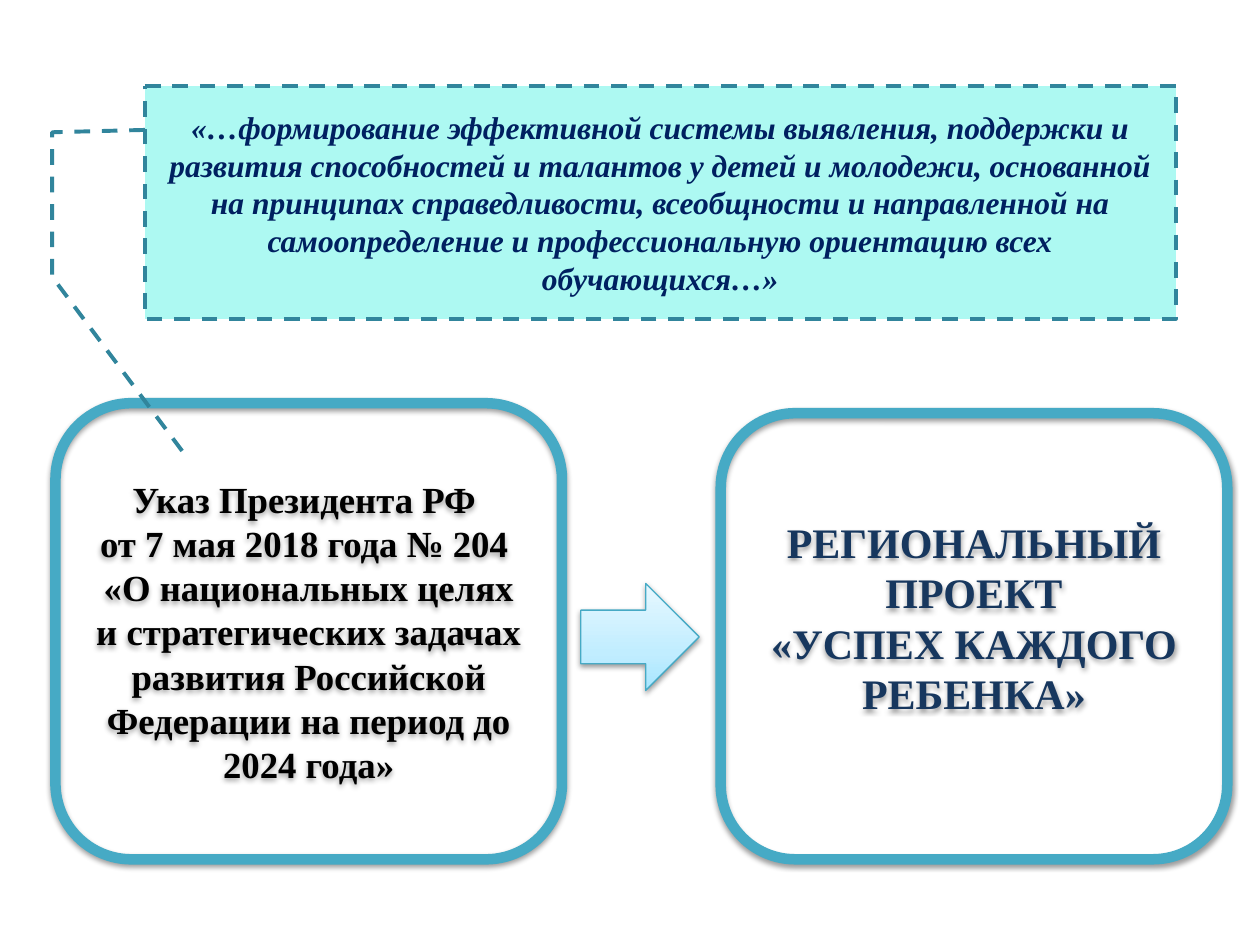
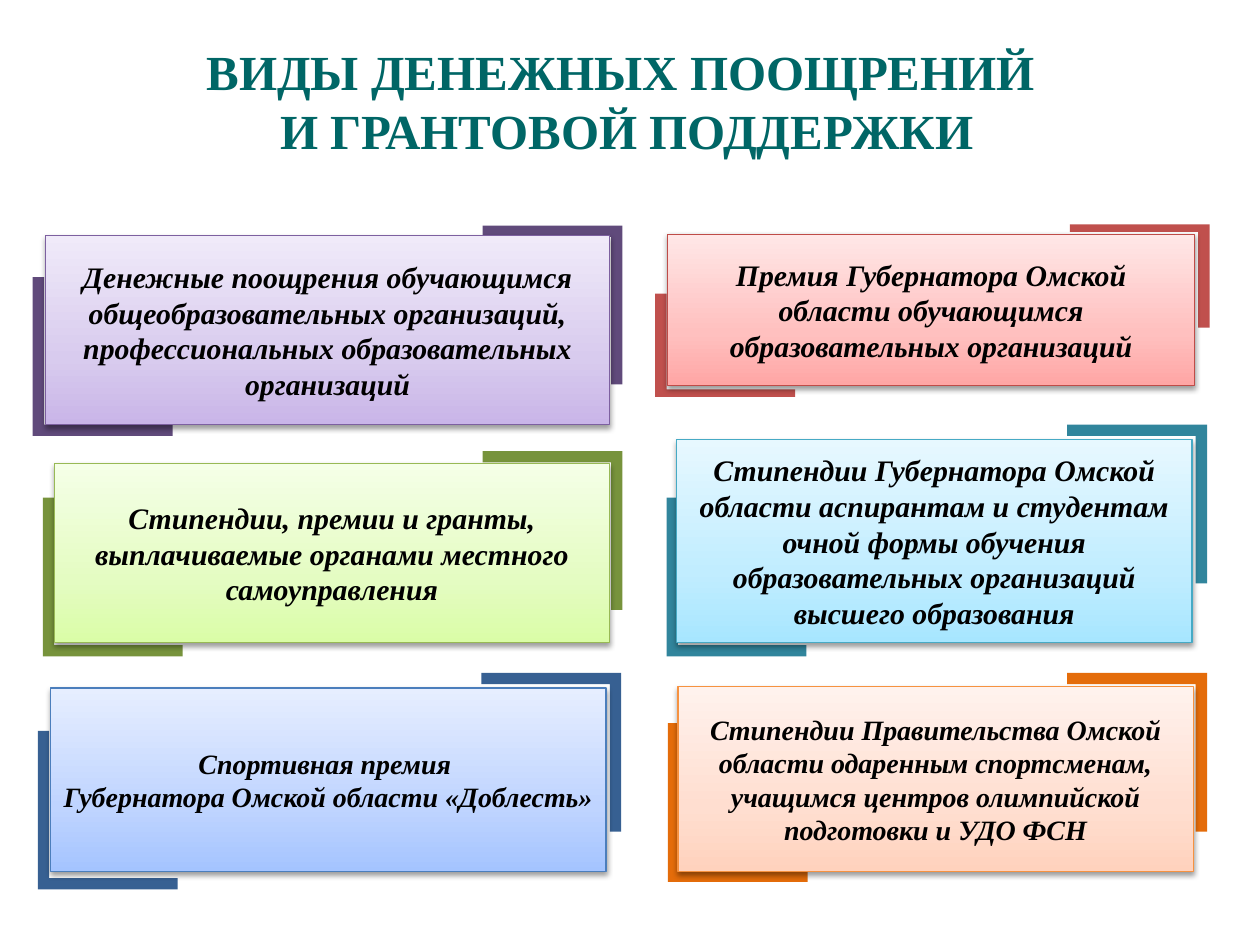
from copy import deepcopy
from dataclasses import dataclass

from lxml.etree import SubElement
from pptx import Presentation
from pptx.dml.color import RGBColor
from pptx.enum.dml import MSO_LINE
from pptx.enum.shapes import MSO_SHAPE as Preset
from pptx.enum.text import MSO_ANCHOR as Anchor, MSO_AUTO_SIZE as AutoSize, PP_ALIGN as Align
from pptx.oxml.ns import qn
from pptx.util import Pt

PX = 9144


@dataclass(frozen=True)
class Palette:
    """Colours of one card: bracket, outline and gradient from bottom to top."""
    bracket: str
    outline: str
    gradient: tuple


@dataclass(frozen=True)
class Theme:
    """Fonts, type sizes and colours shared by the slides."""
    font: str = "Times New Roman"
    title_size: int = 28
    project_size: int = 24
    decree_size: int = 21
    quote_size: int = 18
    card_size: int = 17
    small_card_size: int = 16
    black: str = "000000"
    title: str = "006666"
    project: str = "17375E"
    quote: str = "002060"
    quote_fill: str = "ADF9F2"
    purple: Palette = Palette("604A7B", "7D60A0", ("C9B5E8", "D8CBEE", "F0EAF9"))
    green: Palette = Palette("77933C", "98B955", ("DAFDA7", "E4FCC2", "F5FFE7"))
    blue: Palette = Palette("376092", "4B7EBC", ("A4C4FF", "BFD4FF", "E6EEFF"))
    red: Palette = Palette("C0504D", "BF4C48", ("FFA6A5", "FFC0BF", "FFE7E7"))
    aqua: Palette = Palette("31859C", "46AAC5", ("A7E6FF", "C1EDFF", "E7F8FF"))
    orange: Palette = Palette("E46C0A", "F69240", ("FFD2BD", "FFDED0", "FFF2ED"))


THEME = Theme()


def rgb(code):
    """Turn a hex code into a colour."""
    return RGBColor.from_string(code)


def write_text(shape, lines, *, size, color=THEME.black, italic=False, anchor=Anchor.MIDDLE,
               bottom_inset=5):
    """Fill a shape with centred bold paragraphs."""
    frame = shape.text_frame
    frame.word_wrap = True
    frame.auto_size = AutoSize.NONE
    frame.vertical_anchor = anchor
    frame.margin_bottom = bottom_inset * PX
    frame.text = "\n".join(lines)
    for paragraph in frame.paragraphs:
        paragraph.alignment = Align.CENTER
        for run in paragraph.runs:
            font = run.font
            font.name, font.size = THEME.font, Pt(size)
            font.bold, font.italic = True, italic
            font.color.rgb = rgb(color)


def add_preset(slide, preset, box, outline, weight):
    """Add a preset shape with an outline and no inherited shadow."""
    shape = slide.shapes.add_shape(preset, *(length * PX for length in box))
    shape.line.color.rgb = rgb(outline)
    shape.line.width = Pt(weight)
    shape.shadow.inherit = False
    return shape


def cast_shadow(shape):
    """Give a shape a soft shadow straight below it."""
    effects = shape.element.spPr.find(qn("a:effectLst"))
    shadow = SubElement(effects, qn("a:outerShdw"), blurRad="40000", dist="20000",
                        dir="5400000", rotWithShape="0")
    color = SubElement(shadow, qn("a:srgbClr"), val=THEME.black)
    SubElement(color, qn("a:alpha"), val="38000")


def fill_gradient(shape, colors):
    """Fill a shape with three colours running from bottom to top."""
    shape.fill.gradient()
    shape.fill.gradient_angle = 90
    stops = shape.element.spPr.find(".//" + qn("a:gsLst"))
    stops.append(deepcopy(stops[0]))
    for stop, color, position in zip(shape.fill.gradient_stops, colors, (0, 0.35, 1)):
        stop.color.rgb = rgb(color)
        stop.position = position


def add_glossy(slide, preset, box, palette):
    """Add a shadowed gradient shape."""
    shape = add_preset(slide, preset, box, palette.outline, 0.75)
    fill_gradient(shape, palette.gradient)
    cast_shadow(shape)
    return shape


def add_frame(slide, box, lines, **text_format):
    """Add an unfilled rounded frame with text."""
    frame = add_preset(slide, Preset.ROUNDED_RECTANGLE, box, THEME.aqua.outline, 6)
    frame.fill.background()
    cast_shadow(frame)
    write_text(frame, lines, **text_format)


def add_quote(slide, box, quote):
    """Add the dashed callout that quotes the decree."""
    callout = add_preset(slide, Preset.LINE_CALLOUT_3, box, THEME.aqua.bracket, 2.25)
    callout.line.dash_style = MSO_LINE.DASH
    callout.fill.solid()
    callout.fill.fore_color.rgb = rgb(THEME.quote_fill)
    leader = (0.19, 0, 0.2, -0.09, 0.82, -0.09, 1.59, 0.04)
    for index, value in enumerate(leader):
        callout.adjustments[index] = value
    write_text(callout, [quote], size=THEME.quote_size, color=THEME.quote, italic=True)


def add_bracket(slide, corner, direction, rise, color):
    """Draw an L outward corner: direction 1 is lower left, -1 is upper right."""
    x, y = corner
    bar = rise // 13
    outline = [(111, 0), (111, bar), (9, bar), (9, rise), (0, rise)]
    builder = slide.shapes.build_freeform(x, y, scale=PX)
    builder.add_line_segments([(x + direction * dx, y - direction * dy) for dx, dy in outline])
    bracket = builder.convert_to_shape()
    bracket.fill.solid()
    bracket.fill.fore_color.rgb = rgb(color)
    bracket.line.fill.background()
    bracket.shadow.inherit = False


def add_card(slide, box, lower_left, upper_right, palette, lines, size=THEME.card_size, rise=126):
    """Add a gradient card held by two corner brackets."""
    add_bracket(slide, lower_left, 1, rise, palette.bracket)
    add_bracket(slide, upper_right, -1, rise, palette.bracket)
    card = add_glossy(slide, Preset.RECTANGLE, box, palette)
    write_text(card, lines, size=size, italic=True)


def add_title(slide, box, lines):
    """Place and format the title placeholder."""
    title = slide.shapes.title
    title.left, title.top, title.width, title.height = (length * PX for length in box)
    write_text(title, lines, size=THEME.title_size, color=THEME.title, anchor=Anchor.TOP)


def build_decree(deck):
    """Build the slide that leads from the decree to the regional project."""
    slide = deck.slides.add_slide(deck.slide_layouts[6])
    add_frame(slide, (44, 320, 402, 362), [
        "Указ Президента РФ ",
        "от 7 мая 2018 года № 204 ",
        "«О национальных целях и стратегических задачах развития Российской Федерации "
        "на период до 2024 года»",
    ], size=THEME.decree_size)
    add_quote(slide, (115, 68, 818, 185),
              "«…формирование эффективной системы выявления, поддержки и развития способностей "
              "и талантов у детей и молодежи, основанной на принципах справедливости, всеобщности "
              "и направленной на самоопределение и профессиональную ориентацию всех обучающихся…»")
    add_frame(slide, (572, 328, 402, 354),
              ["РЕГИОНАЛЬНЫЙ ПРОЕКТ", "«УСПЕХ КАЖДОГО РЕБЕНКА»"],
              size=THEME.project_size, color=THEME.project, bottom_inset=35)
    add_glossy(slide, Preset.RIGHT_ARROW, (461, 463, 94, 85), THEME.aqua)


def build_awards(deck):
    """Build the slide with the six kinds of award."""
    slide = deck.slides.add_slide(deck.slide_layouts[5])
    add_title(slide, (-32, 28, 1059, 104),
              ["ВИДЫ ДЕНЕЖНЫХ ПООЩРЕНИЙ ", "И ГРАНТОВОЙ ПОДДЕРЖКИ"])
    add_card(slide, (36, 187, 448, 150), (26, 346), (494, 179), THEME.purple,
             ["Денежные поощрения обучающимся общеобразовательных организаций, "
              "профессиональных образовательных организаций"])
    add_card(slide, (43, 368, 441, 142), (34, 521), (494, 358), THEME.green,
             ["Стипендии, премии и гранты, выплачиваемые органами местного самоуправления"])
    add_card(slide, (530, 186, 418, 120), (520, 315), (960, 178), THEME.red,
             ["Премия Губернатора Омской области обучающимся образовательных организаций"],
             rise=82)
    add_card(slide, (537, 349, 409, 161), (529, 521), (958, 337), THEME.aqua,
             ["Стипендии Губернатора Омской области аспирантам и студентам очной формы обучения "
              "образовательных организаций высшего образования"])
    add_card(slide, (40, 546, 441, 146), (30, 706), (493, 534), THEME.blue,
             ["Спортивная премия ", "Губернатора Омской области «Доблесть»"],
             size=THEME.small_card_size)
    add_card(slide, (538, 545, 409, 147), (530, 700), (958, 534), THEME.orange,
             ["Стипендии Правительства Омской области одаренным спортсменам, "
              "учащимся центров олимпийской подготовки и УДО ФСН"],
             size=THEME.small_card_size)


def main():
    """Build and save the presentation."""
    deck = Presentation()
    deck.slide_width, deck.slide_height = 1000 * PX, 750 * PX
    build_decree(deck)
    build_awards(deck)
    deck.save("out.pptx")


if __name__ == "__main__":
    main()
